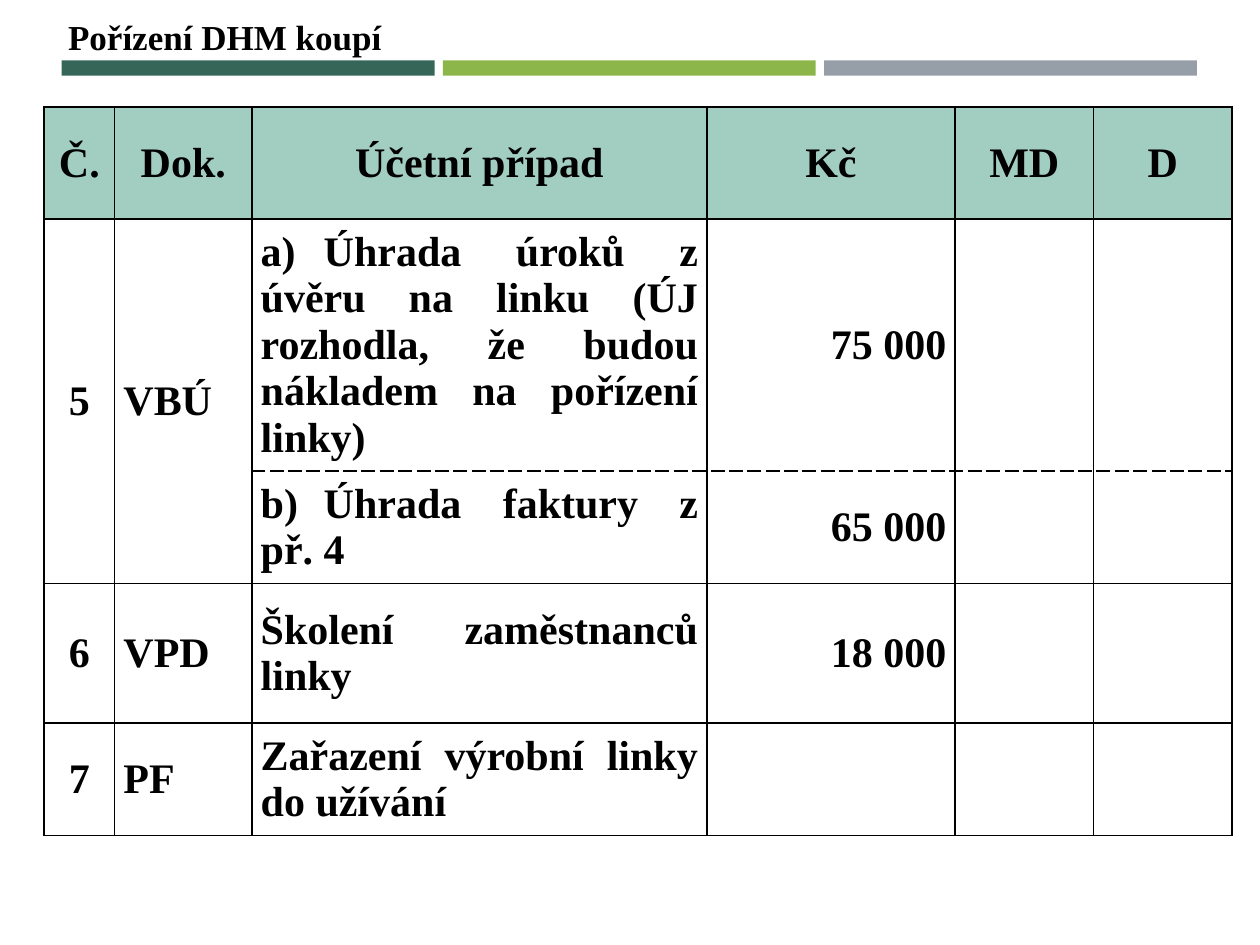
from lxml.etree import SubElement
from pptx import Presentation
from pptx.dml.color import RGBColor
from pptx.enum.shapes import MSO_SHAPE
from pptx.enum.text import MSO_ANCHOR, PP_ALIGN as AL
from pptx.oxml.ns import qn
from pptx.util import Inches, Pt

COLORS = {"black": "000000", "header": "A2CEC1", "green": "366658",
          "lime": "8CB64A", "gray": "969FA7"}
FONT = "Times New Roman"

TITLE = "Pořízení DHM koupí"
BARS = ["green", "lime", "gray"]
HEADER = ["Č.", "Dok.", "Účetní případ", "Kč", "MD", "D"]
ENTRIES = [
    ["5", "VBÚ", "a)\tÚhrada úroků z úvěru na linku (ÚJ rozhodla, že budou "
     "nákladem na pořízení linky)", "75 000", "", ""],
    ["", "", "b)\tÚhrada faktury z př. 4", "65 000", "", ""],
    ["6", "VPD", "Školení zaměstnanců linky", "18 000", "", ""],
    ["7", "PF", "Zařazení výrobní linky do užívání", "", "", ""],
]
ALIGNS = [AL.CENTER, AL.LEFT, AL.JUSTIFY, AL.RIGHT, AL.CENTER, AL.CENTER]
COL_WIDTHS = [0.56, 1.09, 3.61, 1.97, 1.1, 1.1]
ROW_HEIGHTS = [0.89, 2, 0.89, 1.11, 0.89]
SPLIT_ROW = 1          # entry 5 has two parts, this row and the next
MERGED_COLS = (0, 1)


def rgb(name):
    return RGBColor.from_string(COLORS[name])


def style(p, size, align):
    p.alignment = align
    p.font.name, p.font.size, p.font.bold = FONT, Pt(size), True
    p.font.color.rgb = rgb("black")


def add_borders(cell, dashed_side):
    tc_pr = cell._tc.get_or_add_tcPr()
    for side in "LRTB":
        ln = SubElement(tc_pr, qn(f"a:ln{side}"), w=str(Pt(1)))
        fill = SubElement(ln, qn("a:solidFill"))
        SubElement(fill, qn("a:srgbClr"), val=COLORS["black"])
        dash = "sysDash" if side == dashed_side else "solid"
        SubElement(ln, qn("a:prstDash"), val=dash)


def add_tab_stop(p, inches):
    tabs = SubElement(p._p.get_or_add_pPr(), qn("a:tabLst"))
    SubElement(tabs, qn("a:tab"), pos=str(Inches(inches)), algn="l")


prs = Presentation()
prs.slide_width, prs.slide_height = Inches(10), Inches(7.5)
s = prs.slides.add_slide(prs.slide_layouts[5])

# Colour bars
for i, color in enumerate(BARS):
    sp = s.shapes.add_shape(MSO_SHAPE.RECTANGLE, Inches(0.49 + i * 3.025),
                            Inches(0.48), Inches(2.96), Inches(0.12))
    sp.shadow.inherit = False
    sp.fill.solid()
    sp.fill.fore_color.rgb = rgb(color)
    sp.line.fill.background()

# Title
title = s.shapes.title
title.left, title.top = Inches(0.44), Inches(0.07)
title.width, title.height = Inches(2.71), Inches(0.44)
tf = title.text_frame
tf.text = TITLE
tf.word_wrap = False
tf.vertical_anchor = MSO_ANCHOR.TOP
style(tf.paragraphs[0], 20, AL.LEFT)

# Table of accounting entries
rows = [HEADER] + ENTRIES
table = s.shapes.add_table(
    len(rows), len(HEADER), Inches(0.35), Inches(0.85),
    Inches(sum(COL_WIDTHS)), Inches(sum(ROW_HEIGHTS))).table
for column, width in zip(table.columns, COL_WIDTHS):
    column.width = Inches(width)
for row, height in zip(table.rows, ROW_HEIGHTS):
    row.height = Inches(height)

dashed_sides = {SPLIT_ROW: "B", SPLIT_ROW + 1: "T"}
for r, texts in enumerate(rows):
    for c, text in enumerate(texts):
        cell = table.cell(r, c)
        add_borders(cell, None if c in MERGED_COLS else dashed_sides.get(r))
        if r == 0:
            cell.fill.solid()
            cell.fill.fore_color.rgb = rgb("header")
        else:
            cell.fill.background()
        cell.vertical_anchor = MSO_ANCHOR.MIDDLE
        cell.margin_left = cell.margin_right = Inches(0.07)
        cell.margin_top = cell.margin_bottom = 0
        cell.text = text
        p = cell.text_frame.paragraphs[0]
        style(p, 24, AL.CENTER if r == 0 else ALIGNS[c])
        if "\t" in text:
            p_pr = p._p.get_or_add_pPr()
            tabs = p_pr.makeelement(qn("a:tabLst"), {})
            SubElement(tabs, qn("a:tab"), pos=str(Inches(0.5)), algn="l")
            p_pr.insert(0, tabs)

for c in MERGED_COLS:
    table.cell(SPLIT_ROW, c).merge(table.cell(SPLIT_ROW + 1, c))

prs.save("out.pptx")
